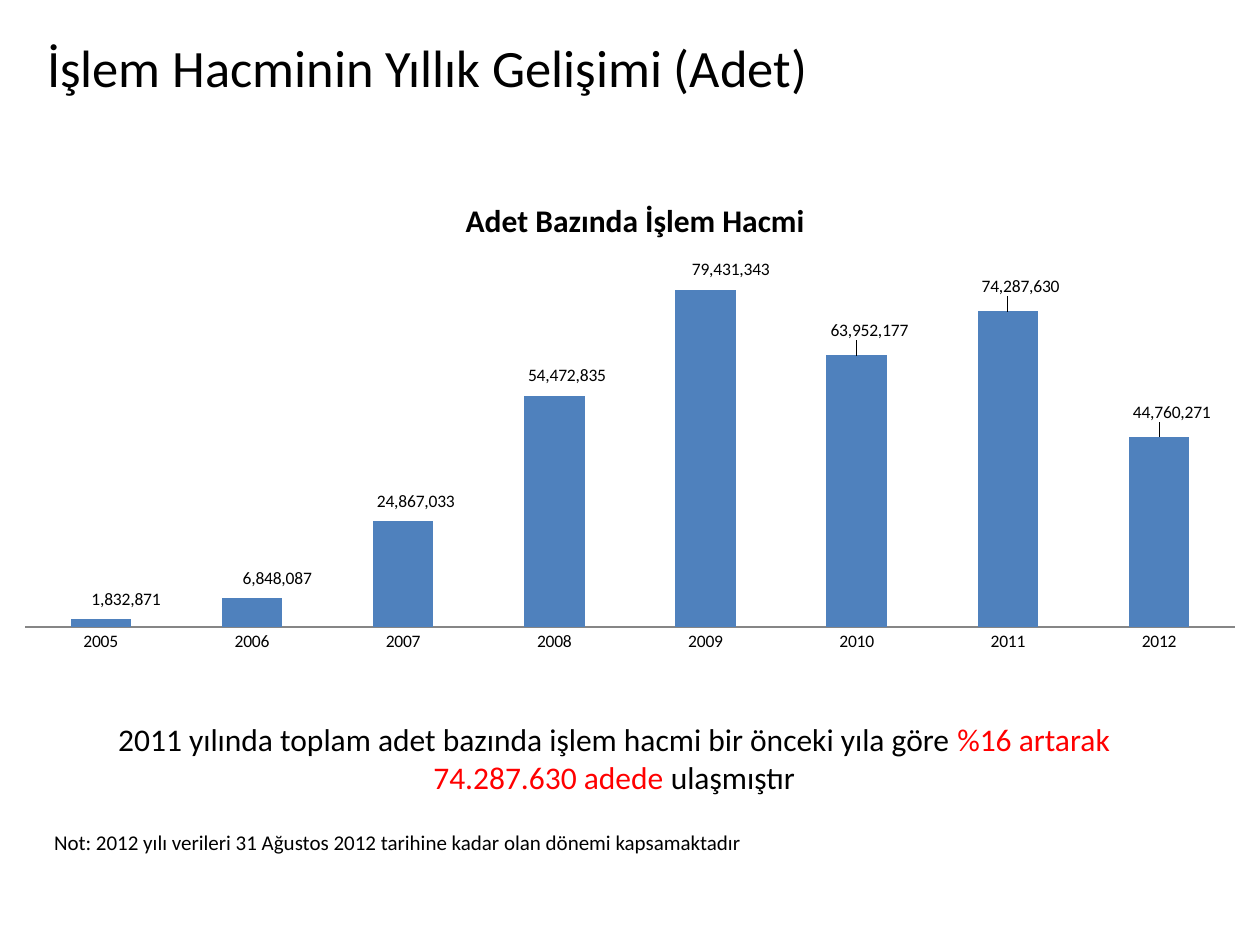
from lxml.etree import SubElement
from pptx import Presentation
from pptx.chart.data import CategoryChartData
from pptx.dml.color import RGBColor
from pptx.enum.chart import XL_CHART_TYPE, XL_LABEL_POSITION, XL_TICK_MARK
from pptx.enum.text import MSO_ANCHOR, PP_ALIGN
from pptx.oxml.ns import qn
from pptx.util import Cm, Pt

BLACK = RGBColor(0x00, 0x00, 0x00)
RED = RGBColor(0xFF, 0x00, 0x00)
BLUE = RGBColor(0x4F, 0x81, 0xBD)
GRAY = RGBColor(0x86, 0x86, 0x86)
FONT = "Calibri"

YEARLY_VOLUMES = {
    "2005": 1832871,
    "2006": 6848087,
    "2007": 24867033,
    "2008": 54472835,
    "2009": 79431343,
    "2010": 63952177,
    "2011": 74287630,
    "2012": 44760271,
}
LABEL_OFFSETS = [
    (0.02, -0.01), (0.02, -0.01), (0.01, -0.01), (0.01, -0.01),
    (0.02, -0.01), (0.01, -0.02), (0.01, -0.02), (0.01, -0.02),
]


def set_font(font, size, color=BLACK, bold=False):
    font.name = FONT
    font.size = Pt(size)
    font.bold = bold
    font.color.rgb = color


def add_title(slide, text):
    title = slide.shapes.title
    title.left, title.top, title.width, title.height = Cm(-0.58), Cm(0.58), Cm(18.4), Cm(2.6)
    title.text_frame.text = text
    title.text_frame.vertical_anchor = MSO_ANCHOR.TOP
    paragraph = title.text_frame.paragraphs[0]
    paragraph.alignment = PP_ALIGN.CENTER
    set_font(paragraph.font, 30)


def add_text(slide, left, top, width, height, runs, size, alignment):
    frame = slide.shapes.add_textbox(left, top, width, height).text_frame
    frame.word_wrap = True
    paragraph = frame.paragraphs[0]
    paragraph.alignment = alignment
    for text, color in runs:
        run = paragraph.add_run()
        run.text = text
        set_font(run.font, size, color)


def set_layout(layout, **settings):
    for child in list(layout):
        layout.remove(child)
    manual = SubElement(layout, qn("c:manualLayout"))
    for name, value in settings.items():
        SubElement(manual, qn(f"c:{name}")).set("val", str(value))


def add_layout(parent, position, **settings):
    for old_layout in parent.findall(qn("c:layout")):
        parent.remove(old_layout)
    layout = SubElement(parent, qn("c:layout"))
    parent.insert(position, layout)
    set_layout(layout, **settings)


def add_volume_chart(slide):
    data = CategoryChartData(number_format="#,##0")
    data.categories = list(YEARLY_VOLUMES)
    data.add_series("Adet", list(YEARLY_VOLUMES.values()))
    chart = slide.shapes.add_chart(
        XL_CHART_TYPE.COLUMN_CLUSTERED, Cm(0), Cm(3.38), Cm(25.4), Cm(9.96), data
    ).chart
    set_font(chart.font, 10)
    chart.has_legend = False
    chart.has_title = True
    chart.chart_title.text_frame.text = "Adet Bazında İşlem Hacmi"
    set_font(chart.chart_title.text_frame.paragraphs[0].font, 18, bold=True)
    chart.chart_title.include_in_layout = False
    add_layout(chart.chart_title.element, 1, xMode="edge", yMode="edge", x=0.365, y=0.05)
    add_layout(
        chart.element.find(".//" + qn("c:plotArea")), 0,
        layoutTarget="inner", xMode="edge", yMode="edge", x=0.02, y=0.156, w=0.96, h=0.774,
    )

    chart.category_axis.major_tick_mark = XL_TICK_MARK.NONE
    chart.category_axis.format.line.color.rgb = GRAY
    chart.value_axis.minimum_scale = 0
    chart.value_axis.maximum_scale = 90000000
    chart.value_axis.has_major_gridlines = False
    chart.value_axis.visible = False

    plot = chart.plots[0]
    plot.gap_width = 150
    plot.vary_by_categories = False
    series = plot.series[0]
    series.format.fill.solid()
    series.format.fill.fore_color.rgb = BLUE
    labels = series.data_labels
    labels.show_value = True
    labels.number_format = "#,##0"
    labels.number_format_is_linked = False
    for index in range(len(LABEL_OFFSETS)):
        series.points[index].data_label.position = XL_LABEL_POSITION.OUTSIDE_END
    for label, (x, y) in zip(chart.element.iter(qn("c:dLbl")), LABEL_OFFSETS):
        add_layout(label, 1, x=x, y=y)


def main():
    presentation = Presentation()
    presentation.slide_width = Cm(25.4)
    presentation.slide_height = Cm(19.05)
    slide = presentation.slides.add_slide(presentation.slide_layouts[5])
    add_title(slide, "İşlem Hacminin Yıllık Gelişimi (Adet)")
    summary = [
        ("2011 yılında toplam adet bazında işlem hacmi bir önceki yıla göre ", BLACK),
        ("%16 artarak 74.287.630 adede ", RED),
        ("ulaşmıştır", BLACK),
    ]
    add_text(slide, Cm(1.9), Cm(14.4), Cm(20.96), Cm(1.8), summary, 18, PP_ALIGN.CENTER)
    note = [("Not: 2012 yılı verileri 31 Ağustos 2012 tarihine kadar olan dönemi kapsamaktadır", BLACK)]
    add_text(slide, Cm(0.84), Cm(16.59), Cm(14.8), Cm(0.76), note, 12, PP_ALIGN.LEFT)
    add_volume_chart(slide)
    presentation.save("out.pptx")


if __name__ == "__main__":
    main()
